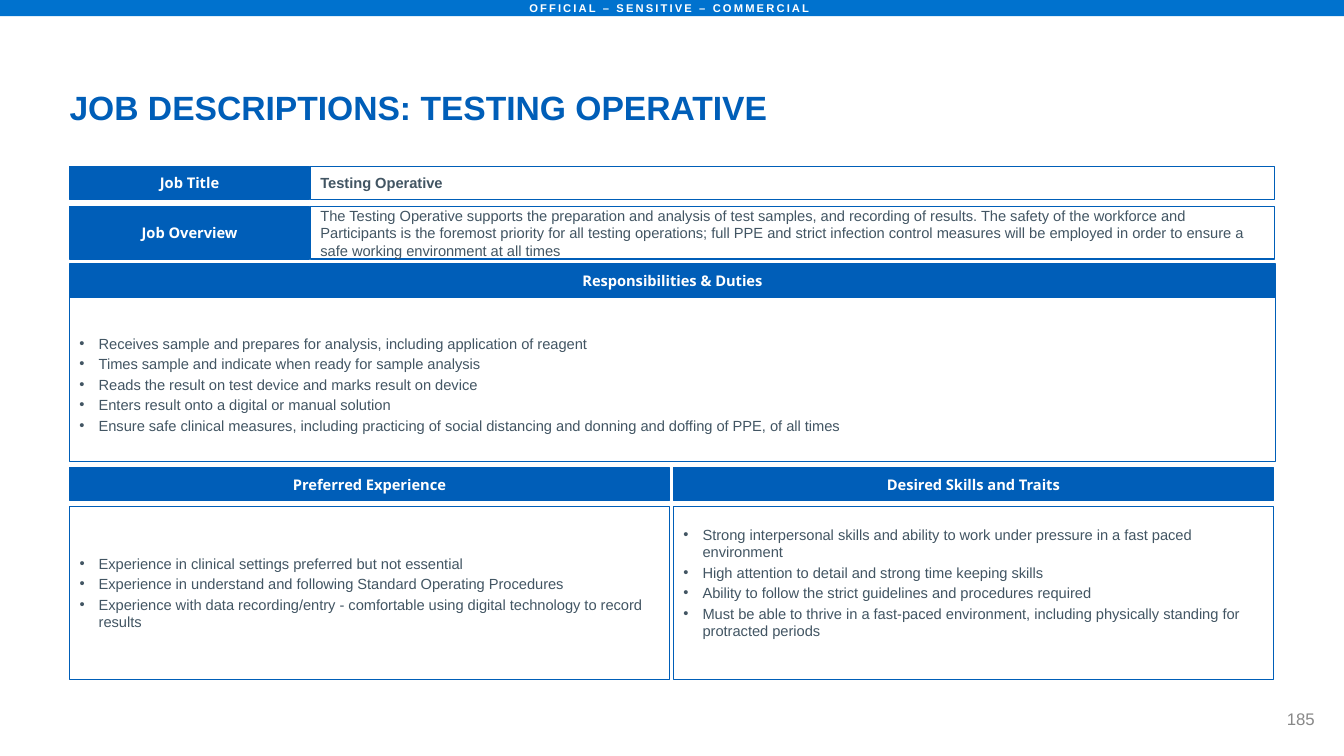
from dataclasses import dataclass
from typing import Any, Optional

import lxml.etree
import pptx
import pptx.dml.color
import pptx.enum.shapes
import pptx.enum.text
import pptx.oxml.ns
import pptx.util

Inches = pptx.util.Inches
Pt = pptx.util.Pt
RGBColor = pptx.dml.color.RGBColor
Align = pptx.enum.text.PP_ALIGN
Anchor = pptx.enum.text.MSO_ANCHOR

BLUE = RGBColor(0x00, 0x5E, 0xB8)
BANNER_BLUE = RGBColor(0x00, 0x72, 0xCE)
SLATE = RGBColor(0x42, 0x55, 0x63)
GREY = RGBColor(0x88, 0x88, 0x88)
WHITE = RGBColor(0xFF, 0xFF, 0xFF)

LEFT, FULL_WIDTH, HALF_WIDTH, RIGHT_HALF = 0.69, 11.96, 5.95, 6.68
LABEL_WIDTH, VALUE_LEFT, VALUE_WIDTH = 2.38, 3.08, 9.56
BAR_HEIGHT = 0.33

LABEL_FONT = {"name": "Open Sans", "size": Pt(10.5), "bold": True}
BODY_FONT = {"name": "Arial", "size": Pt(10.5), "bold": False}
STRONG_FONT = {**BODY_FONT, "bold": True}


@dataclass(frozen=True)
class Panel:
    left: float
    top: float
    width: float
    height: float
    lines: tuple[str, ...]
    font: dict[str, Any]
    color: RGBColor = SLATE
    fill: Optional[RGBColor] = None
    line: Optional[RGBColor] = BLUE
    line_width: float = 0.85
    align: Align = Align.LEFT
    anchor: Anchor = Anchor.MIDDLE
    insets: tuple[float, float, float, float] = (0.1, 0.05, 0.1, 0.05)
    bulleted: bool = False
    tracking: int = 0


def apply_format(target: Any, values: dict[str, Any]) -> None:
    for name, value in values.items():
        setattr(target, name, value)


def add_bullet(para: Any) -> None:
    properties = para._p.get_or_add_pPr()
    properties.set("marL", str(Inches(0.19)))
    properties.set("indent", str(-Inches(0.19)))
    for tag, attribute, value in (("a:buFont", "typeface", "Arial"), ("a:buChar", "char", "•")):
        element = lxml.etree.SubElement(properties, pptx.oxml.ns.qn(tag))
        element.set(attribute, value)


def write_text(box: Any, panel: Panel) -> None:
    frame = box.text_frame
    left, top, right, bottom = panel.insets
    apply_format(frame, {
        "word_wrap": True,
        "auto_size": pptx.enum.text.MSO_AUTO_SIZE.NONE,
        "vertical_anchor": panel.anchor,
        "margin_left": Inches(left),
        "margin_top": Inches(top),
        "margin_right": Inches(right),
        "margin_bottom": Inches(bottom),
    })
    for index, line in enumerate(panel.lines):
        para = frame.add_paragraph() if index else frame.paragraphs[0]
        para.alignment = panel.align
        if panel.bulleted:
            para.space_after = Pt(2)
            add_bullet(para)
        span = para.add_run()
        span.text = line
        apply_format(span.font, panel.font)
        span.font.color.rgb = panel.color
        if panel.tracking:
            span._r.get_or_add_rPr().set("spc", str(panel.tracking))


def place(box: Any, panel: Panel) -> None:
    apply_format(box, {
        "left": Inches(panel.left),
        "top": Inches(panel.top),
        "width": Inches(panel.width),
        "height": Inches(panel.height),
    })


def draw_panel(page: Any, panel: Panel) -> None:
    box = page.shapes.add_shape(pptx.enum.shapes.MSO_SHAPE.RECTANGLE, 0, 0, 0, 0)
    place(box, panel)
    box.shadow.inherit = False
    if panel.fill is None:
        box.fill.background()
    else:
        box.fill.solid()
        box.fill.fore_color.rgb = panel.fill
    if panel.line is None:
        box.line.fill.background()
    else:
        box.line.color.rgb = panel.line
        box.line.width = Pt(panel.line_width)
    write_text(box, panel)


def label(left: float, top: float, width: float, text: str, height: float = BAR_HEIGHT) -> Panel:
    return Panel(left, top, width, height, (text,), LABEL_FONT, WHITE, BLUE, align=Align.CENTER)


def bullets(left: float, top: float, width: float, height: float,
            lines: tuple[str, ...], **options: Any) -> Panel:
    return Panel(left, top, width, height, lines, BODY_FONT,
                 line_width=0.75, bulleted=True, **options)


TITLE = Panel(LEFT, 0.91, 11.03, 0.36, ("JOB DESCRIPTIONS: TESTING OPERATIVE",),
              {"name": "Arial", "size": Pt(24), "bold": True}, BLUE,
              anchor=Anchor.TOP, insets=(0, 0, 0, 0))
PAGE_NUMBER = Panel(12.08, 6.76, 1.06, 0.74, ("185",), {"name": "Arial", "size": Pt(12)}, GREY,
                    align=Align.RIGHT, insets=(0.1, 0.04, 0.1, 0.04))

PANELS = (
    Panel(0, 0, 13.33, 0.16, ("OFFICIAL – SENSITIVE – COMMERCIAL ",),
          {"name": "Arial", "size": Pt(8), "bold": True}, WHITE, BANNER_BLUE, None,
          align=Align.CENTER, insets=(0, 0.04, 0, 0.04), tracking=150),
    bullets(LEFT, 2.87, FULL_WIDTH, 1.71, (
        "Receives sample and prepares for analysis, including application of reagent",
        "Times sample and indicate when ready for sample analysis",
        "Reads the result on test device and marks result on device",
        "Enters result onto a digital or manual solution",
        "Ensure safe clinical measures, including practicing of social distancing and donning "
        "and doffing of PPE, of all times",
    ), anchor=Anchor.TOP, insets=(0.1, 0.45, 0.1, 0.05)),
    label(LEFT, 1.65, LABEL_WIDTH, "Job Title"),
    Panel(VALUE_LEFT, 1.65, VALUE_WIDTH, BAR_HEIGHT, ("Testing Operative",), STRONG_FONT),
    label(LEFT, 2.05, LABEL_WIDTH, "Job Overview", 0.52),
    Panel(VALUE_LEFT, 2.05, VALUE_WIDTH, 0.52, (
        "The Testing Operative supports the preparation and analysis of test samples, and "
        "recording of results. The safety of the workforce and Participants is the foremost "
        "priority for all testing operations; full PPE and strict infection control measures "
        "will be employed in order to ensure a safe working environment at all times",
    ), BODY_FONT),
    label(LEFT, 2.62, FULL_WIDTH, "Responsibilities & Duties"),
    label(LEFT, 4.64, HALF_WIDTH, "Preferred Experience"),
    label(RIGHT_HALF, 4.64, HALF_WIDTH, "Desired Skills and Traits"),
    bullets(LEFT, 5.02, HALF_WIDTH, 1.72, (
        "Experience in clinical settings preferred but not essential",
        "Experience in understand and following Standard Operating Procedures",
        "Experience with data recording/entry - comfortable using digital technology to "
        "record results",
    )),
    bullets(RIGHT_HALF, 5.02, HALF_WIDTH, 1.72, (
        "Strong interpersonal skills and ability to work under pressure in a fast paced "
        "environment",
        "High attention to detail and strong time keeping skills",
        "Ability to follow the strict guidelines and procedures required",
        "Must be able to thrive in a fast-paced environment, including physically standing "
        "for protracted periods",
    ), insets=(0.1, 0.05, 0.1, 0.25)),
)


def main() -> None:
    deck = pptx.Presentation()
    apply_format(deck, {"slide_width": Inches(13.33), "slide_height": Inches(7.5)})
    page = deck.slides.add_slide(deck.slide_layouts[5])
    title = page.shapes.title
    place(title, TITLE)
    write_text(title, TITLE)
    title.text_frame.paragraphs[0].line_spacing = 0.9
    for panel in PANELS:
        draw_panel(page, panel)
    number = page.shapes.add_textbox(0, 0, 0, 0)
    place(number, PAGE_NUMBER)
    write_text(number, PAGE_NUMBER)
    deck.save("out.pptx")


if __name__ == "__main__":
    main()
